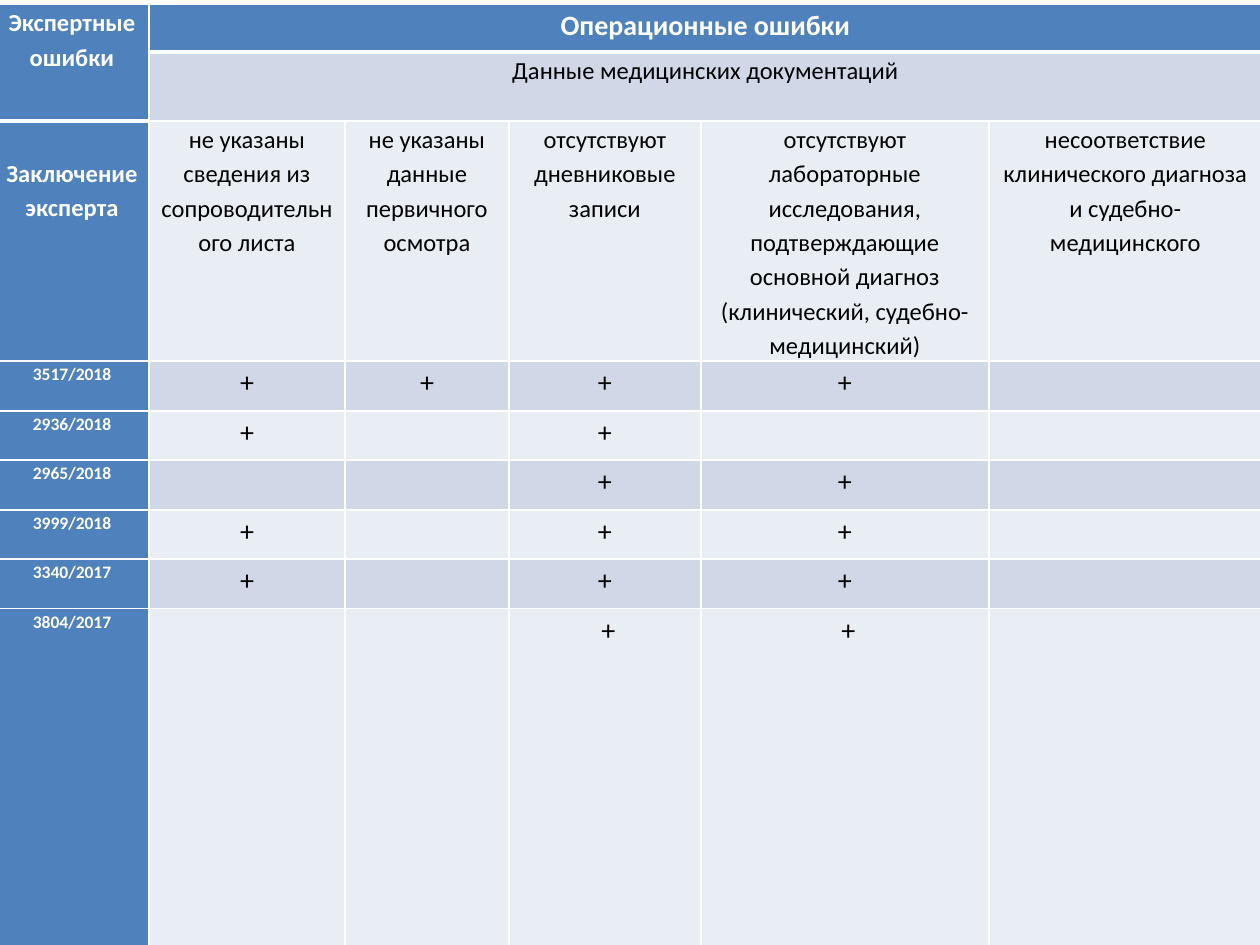
import pptx
import pptx.dml.color
import pptx.enum.text
import pptx.oxml
import pptx.oxml.ns
import pptx.util

PX = 914400 // 126
BLUE, LIGHT, PALE = "4F81BD", "D0D8E8", "E9EDF4"
WHITE, BLACK = "FFFFFF", "000000"

# Content
CORNER = "Экспертные ошибки"
TITLE = "Операционные ошибки"
SUBTITLE = "Данные медицинских документаций"
HEADINGS = [
    "Заключение эксперта",
    "не указаны сведения из сопроводительного листа",
    "не указаны данные первичного осмотра",
    "отсутствуют дневниковые записи",
    "отсутствуют лабораторные исследования, подтверждающие основной диагноз "
    "(клинический, судебно-медицинский)",
    "несоответствие клинического диагноза и судебно-медицинского",
]
CASES = [
    ("3517/2018", "+", "+", "+", "+", ""),
    ("2936/2018", "+", "", "+", "", ""),
    ("2965/2018", "", "", "+", "+", ""),
    ("3999/2018", "+", "", "+", "+", ""),
    ("3340/2017", "+", "", "+", "+", ""),
    ("3804/2017", "", "", "+", "+", ""),
]
ROWS = [
    (CORNER, TITLE, "", "", "", ""),
    ("", SUBTITLE, "", "", "", ""),
    HEADINGS,
    *CASES,
]

# Geometry in px
LEFT, TOP = -5, 4
COLUMN_WIDTHS = [154, 196, 164, 192, 288, 273]
ROW_HEIGHTS = [48, 69, 240, 50, 49, 50, 49, 50, 381]
SIDE_MARGIN = 9
HEADING_LINE = 34
LAST_MARK_INDENT = 7


def color(value):
    return pptx.dml.color.RGBColor.from_string(value)


def add_borders(cell, bottom_width):
    properties = cell._tc.get_or_add_tcPr()
    for side, width in (("L", 1), ("R", 1), ("T", 1), ("B", bottom_width)):
        properties.append(pptx.oxml.parse_xml(
            f'<a:ln{side} {pptx.oxml.ns.nsdecls("a")} w="{pptx.util.Pt(width)}">'
            f'<a:solidFill><a:srgbClr val="{WHITE}"/></a:solidFill></a:ln{side}>'))


def text_size(row, column):
    if row == 0:
        return 14 if column == 0 else 16
    if row < 3:
        return 14
    return 10 if column == 0 else 16


def style_cell(cell, row, column, text):
    is_header = row == 0 or column == 0
    under_header = row == 0 or (row == 1 and column == 0)
    add_borders(cell, 3 if under_header else 1)
    cell.fill.solid()
    cell.fill.fore_color.rgb = color(BLUE if is_header else LIGHT if row % 2 else PALE)
    cell.margin_left = cell.margin_right = SIDE_MARGIN * PX
    cell.margin_top = cell.margin_bottom = 0
    cell.text = text
    paragraph = cell.text_frame.paragraphs[0]
    paragraph.alignment = pptx.enum.text.PP_ALIGN.CENTER
    paragraph.line_spacing = 1.15
    paragraph.font.name = "Calibri"
    paragraph.font.size = pptx.util.Pt(text_size(row, column))
    paragraph.font.bold = is_header
    paragraph.font.color.rgb = color(WHITE if is_header else BLACK)


def main():
    presentation = pptx.Presentation()
    presentation.slide_width = 1260 * PX
    presentation.slide_height = 945 * PX
    slide = presentation.slides.add_slide(presentation.slide_layouts[6])

    # Table grid
    table = slide.shapes.add_table(
        len(ROWS), len(COLUMN_WIDTHS), LEFT * PX, TOP * PX,
        sum(COLUMN_WIDTHS) * PX, sum(ROW_HEIGHTS) * PX).table
    table.first_row = table.horz_banding = False
    for column, width in zip(table.columns, COLUMN_WIDTHS):
        column.width = width * PX
    for row, height in zip(table.rows, ROW_HEIGHTS):
        row.height = height * PX

    # Cells
    for row, texts in enumerate(ROWS):
        for column, text in enumerate(texts):
            style_cell(table.cell(row, column), row, column, text)

    # Merged headers
    table.cell(0, 0).merge(table.cell(1, 0))
    for row in (0, 1):
        table.cell(row, 1).merge(table.cell(row, 5))

    # Lowered row heading and indented marks of the last case
    table.cell(2, 0).margin_top = HEADING_LINE * PX
    for column in (3, 4):
        table.cell(len(ROWS) - 1, column).margin_left = (SIDE_MARGIN + LAST_MARK_INDENT) * PX

    presentation.save("out.pptx")


if __name__ == "__main__":
    main()
